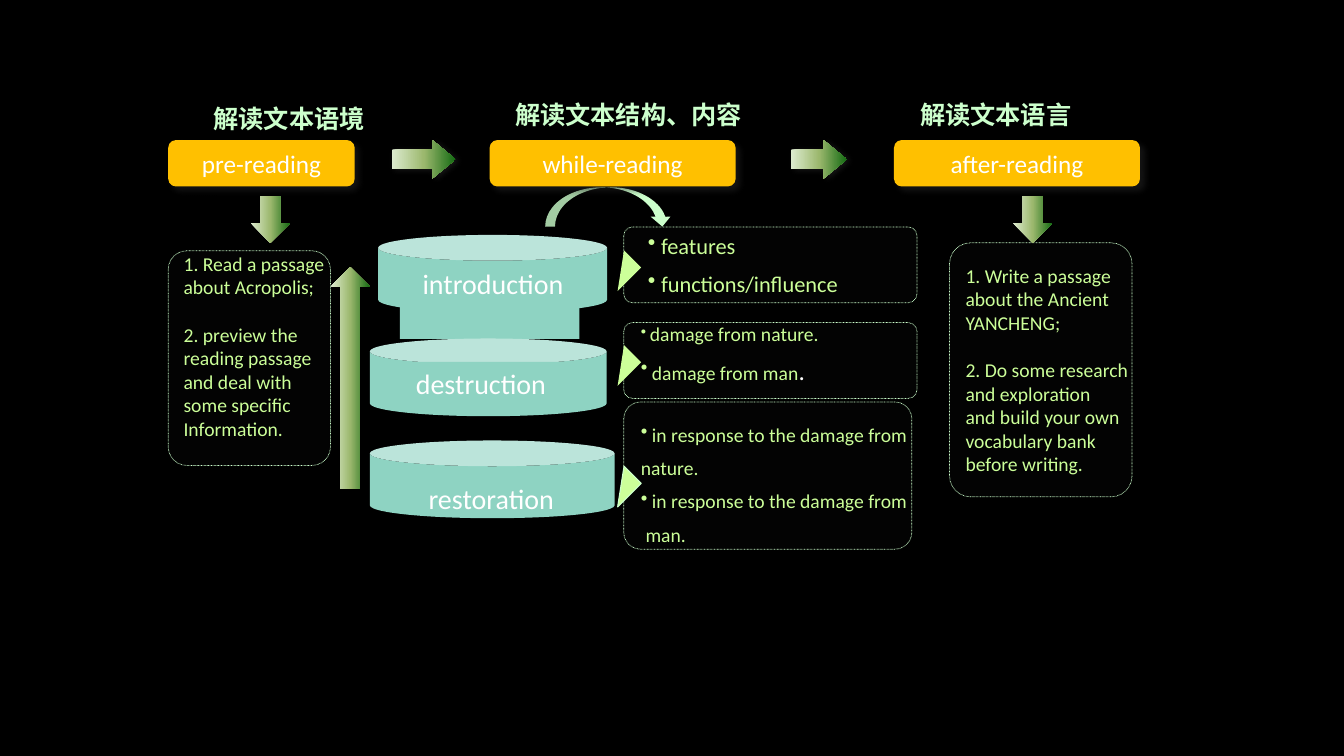
from copy import deepcopy
from dataclasses import dataclass

from lxml import etree
from pptx import Presentation
from pptx.dml.color import RGBColor
from pptx.enum.dml import MSO_LINE
from pptx.enum.shapes import MSO_SHAPE
from pptx.enum.text import MSO_ANCHOR, PP_ALIGN
from pptx.oxml.ns import qn
from pptx.util import Cm, Pt

ROUNDED, RECT, CAN = MSO_SHAPE.ROUNDED_RECTANGLE, MSO_SHAPE.RECTANGLE, MSO_SHAPE.CAN
RIGHT, UP, DOWN = MSO_SHAPE.RIGHT_ARROW, MSO_SHAPE.UP_ARROW, MSO_SHAPE.DOWN_ARROW
CURVED, TRIANGLE = MSO_SHAPE.CURVED_DOWN_ARROW, MSO_SHAPE.RIGHT_TRIANGLE
DOTTED = MSO_LINE.ROUND_DOT
MIDDLE, TOP = MSO_ANCHOR.MIDDLE, MSO_ANCHOR.TOP
CENTER, LEFT = PP_ALIGN.CENTER, PP_ALIGN.LEFT


@dataclass(frozen=True)
class Theme:
    font: str = "Calibri"
    back: str = "000000"
    white: str = "FFFFFF"
    mint: str = "CCFFCC"
    lime: str = "CCFF99"
    teal: str = "8ED3C2"
    amber: str = "FFC000"
    smoke: str = "4D4D4D"
    gradient: tuple = ("DDEBCF", "9CB86E", "156B13")
    tab_shadow: str = "292929"
    arrow_shadow: str = "333333"
    title: int = 18
    label: int = 20
    note: int = 14


@dataclass(frozen=True)
class Box:
    """A frame in centimetres."""
    left: float
    top: float
    width: float
    height: float

    def inner(self, left, top, width, height):
        return Box(self.left + left, self.top + top, width, height)

    def emu(self):
        return Cm(self.left), Cm(self.top), Cm(self.width), Cm(self.height)


@dataclass(frozen=True)
class Point:
    """One line of a list; hang is the bullet's indent, lead a plain line's."""
    text: str
    hang: float = 0
    lead: float = 0
    bullet_size: int = 100
    tail: str = ""


THEME = Theme()


def add_figure(page, kind, box, color=None, adjust=()):
    figure = page.shapes.add_shape(kind, *box.emu())
    figure.shadow.inherit = False
    figure.line.fill.background()
    if color:
        figure.fill.solid()
        figure.fill.fore_color.rgb = RGBColor.from_string(color)
    for index, value in enumerate(adjust):
        figure.adjustments[index] = value
    return figure


def add_shadow(figure, color, distance, angle):
    effects = figure._element.spPr.find(qn("a:effectLst"))
    shadow = etree.SubElement(effects, qn("a:outerShdw"), blurRad=str(Pt(5)),
                              dist=str(Pt(distance)), dir=str(angle * 60000))
    tint = etree.SubElement(shadow, qn("a:srgbClr"), val=color)
    etree.SubElement(tint, qn("a:alpha"), val="50000")


def style_span(span, size, color, bold=False):
    span.font.name, span.font.size, span.font.bold = THEME.font, Pt(size), bold
    span.font.color.rgb = RGBColor.from_string(color)


def write_lines(frame, lines, size, color, align=LEFT, bold=False):
    frame.text = "\n".join(lines)
    for para in frame.paragraphs:
        para.alignment = align
        style_span(para.runs[0], size, color, bold)
    return frame.paragraphs


def set_indent(para, margin, first):
    properties = para._p.get_or_add_pPr()
    properties.set("marL", str(Cm(margin)))
    properties.set("indent", str(Cm(first)))
    return properties


def add_panel(page, box):
    panel = add_figure(page, ROUNDED, box, THEME.smoke, (0.115,))
    tint = panel._element.spPr.find(qn("a:solidFill"))[0]
    etree.SubElement(tint, qn("a:alpha"), val="5000")
    panel.line.color.rgb = RGBColor.from_string(THEME.mint)
    panel.line.width = Pt(0.5)
    panel.line.dash_style = DOTTED
    return panel


def add_arrow(page, kind, box):
    arrow = add_figure(page, kind, box)
    arrow.fill.gradient()
    arrow.fill.gradient_angle = 0
    start, middle, end = THEME.gradient
    stops = arrow.fill.gradient_stops
    stops[0].color.rgb = RGBColor.from_string(start)
    stops[1].color.rgb = RGBColor.from_string(end)
    first = arrow._element.spPr.find(".//" + qn("a:gs"))
    halfway = deepcopy(first)
    halfway.set("pos", "50000")
    halfway[0].set("val", middle)
    first.addnext(halfway)
    if kind == RIGHT:
        arrow.adjustments[1] = 0.603
        add_shadow(arrow, THEME.arrow_shadow, 2.3, 25)


def add_stage(page, box, name, heading, heading_box):
    tab = add_figure(page, ROUNDED, box, THEME.amber, (0.167,))
    add_shadow(tab, THEME.tab_shadow, 4.2, 45)
    tab.text_frame.word_wrap = False
    tab.text_frame.vertical_anchor = MIDDLE
    write_lines(tab.text_frame, [name], THEME.title, THEME.white, CENTER)
    caption = page.shapes.add_textbox(*heading_box.emu())
    caption.text_frame.word_wrap = False
    write_lines(caption.text_frame, [heading], THEME.title, THEME.mint, bold=True)


def add_notes(page, box, tasks, space_below=0):
    frame = add_panel(page, box).text_frame
    frame.word_wrap = False
    frame.vertical_anchor = MIDDLE
    frame.margin_bottom = Cm(0.13 + space_below)
    lines = [line for task in tasks for line in task]
    paras = write_lines(frame, lines, THEME.note, THEME.lime)
    for para in paras:
        set_indent(para, 0.97, -0.97)
    paras[len(tasks[0])].space_before = Pt(17)


def add_points(page, box, points, size):
    frame = page.shapes.add_textbox(*box.emu()).text_frame
    frame.word_wrap = True
    paras = write_lines(frame, [point.text for point in points], size, THEME.lime)
    for index, (para, point) in enumerate(zip(paras, points)):
        if index:
            para.space_before = Pt(size / 2)
        properties = set_indent(para, point.hang or point.lead, -point.hang)
        if point.hang:
            etree.SubElement(properties, qn("a:buSzPct"), val=str(point.bullet_size * 1000))
            etree.SubElement(properties, qn("a:buChar"), char="•")
        if point.tail:
            span = para.add_run()
            span.text = point.tail
            style_span(span, THEME.title, THEME.white)


def add_drum(page, box, label, label_box, margin, filled=True):
    add_figure(page, CAN, box, THEME.teal, (0.332,))
    if filled:
        frame = add_figure(page, RECT, label_box, THEME.teal).text_frame
    else:
        frame = page.shapes.add_textbox(*label_box.emu()).text_frame
    frame.word_wrap = True
    frame.vertical_anchor = TOP
    frame.margin_left = Cm(margin)
    write_lines(frame, [label], THEME.label, THEME.white)


def add_details(page, box, points, size, shift, pointer_top, outlined=False):
    add_panel(page, box)
    add_points(page, box.inner(*shift, 9, box.height), points, size)
    pointer = add_figure(page, TRIANGLE, box.inner(-0.38, pointer_top, 0.61, 0.84), THEME.lime)
    pointer.rotation = 225
    if outlined:
        pointer.line.color.rgb = RGBColor.from_string(THEME.mint)
        pointer.line.width = Pt(0.75)


def add_text_structure(page, box):
    """The three drums of the passage, each with its details on the right."""
    add_drum(page, box.inner(0.21, 0.2, 5.77, 1.96), "introduction",
             box.inner(0.76, 0.86, 4.52, 1.96), 0.57)
    add_details(page, box.inner(6.4, 0, 7.39, 1.91),
                [Point("features", 0.33), Point("functions/influence", 0.33)],
                16, (0.36, 0), 0.68)
    add_drum(page, box.inner(0, 2.81, 5.97, 1.96), "destruction",
             box.inner(0.59, 3.4, 4.88, 1.12), 0.57)
    add_details(page, box.inner(6.4, 2.41, 7.39, 1.91),
                [Point("damage from nature.", 0.23, bullet_size=80),
                 Point("damage from man", 0.28, tail=".")],
                THEME.note, (0.18, -0.15), 0.66)
    add_drum(page, box.inner(0, 5.38, 6.17, 1.96), "restoration",
             box.inner(0.59, 6.29, 5.74, 1.12), 0.89, filled=False)
    add_details(page, box.inner(6.4, 4.41, 7.26, 3.71),
                [Point("in response to the damage from", 0.28), Point("nature."),
                 Point("in response to the damage from", 0.28), Point("man.", lead=0.12)],
                THEME.note, (0.18, 0.39), 1.71, outlined=True)


def main():
    deck = Presentation()
    deck.slide_width, deck.slide_height = Cm(33.87), Cm(19.05)
    page = deck.slides.add_slide(deck.slide_layouts[6])
    page.background.fill.solid()
    page.background.fill.fore_color.rgb = RGBColor.from_string(THEME.back)

    add_text_structure(page, Box(9.32, 5.72, 13.79, 8.12))
    add_figure(page, CURVED, Box(13.74, 4.72, 3.2, 0.99), THEME.mint)
    for left, width, name, heading, heading_box in (
            (4.24, 4.7, "pre-reading", "解读文本语境", Box(5.13, 2.49, 4.4, 1.02)),
            (12.34, 6.2, "while-reading", "解读文本结构、内容", Box(12.73, 2.39, 6.32, 1.02)),
            (22.53, 6.2, "after-reading", "解读文本语言", Box(22.94, 2.39, 4.4, 1.02))):
        add_stage(page, Box(left, 3.53, width, 1.17), name, heading, heading_box)
    add_notes(page, Box(4.24, 6.32, 4.09, 5.41), (
        ("1. Read a passage", "about Acropolis;"),
        ("2. preview the", "reading passage", "and deal with", "some specific",
         "Information.")), space_below=0.6)
    add_notes(page, Box(23.93, 6.12, 4.6, 6.4), (
        ("1. Write a passage", "about the Ancient", "YANCHENG;"),
        ("2. Do some research", "and exploration", "and build your own",
         "vocabulary bank", "before writing.")))
    for kind, box in ((RIGHT, Box(9.88, 3.53, 1.6, 0.97)), (RIGHT, Box(19.94, 3.53, 1.4, 0.97)),
                      (UP, Box(8.33, 6.73, 0.99, 5.59)),
                      (DOWN, Box(6.32, 4.93, 0.99, 1.19)), (DOWN, Box(25.53, 4.93, 0.99, 1.19))):
        add_arrow(page, kind, box)
    deck.save("out.pptx")


if __name__ == "__main__":
    main()
